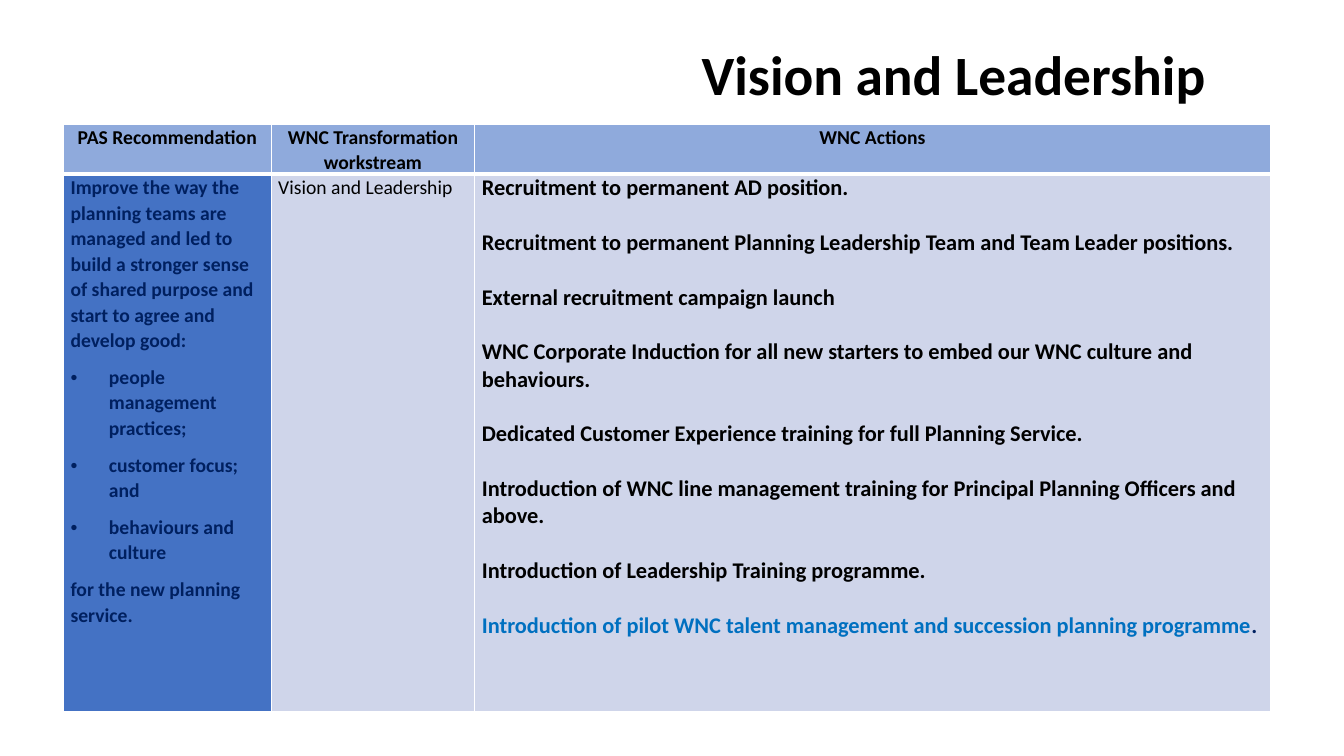
from lxml import etree
from pptx import Presentation
from pptx.dml.color import RGBColor
from pptx.enum.text import MSO_ANCHOR, PP_ALIGN
from pptx.oxml.ns import qn
from pptx.util import Inches, Pt

CENTER = PP_ALIGN.CENTER
MIDDLE = MSO_ANCHOR.MIDDLE
BLACK = RGBColor(0x00, 0x00, 0x00)
NAVY = RGBColor(0x00, 0x20, 0x60)
AZURE = RGBColor(0x00, 0x70, 0xC0)
SKY = RGBColor(0x8F, 0xAA, 0xDC)
BLUE = RGBColor(0x44, 0x72, 0xC4)
PALE = RGBColor(0xCF, 0xD5, 0xEA)

WIDTHS = [2.06, 2.02, 7.89]
HEIGHTS = [0.44, 5.33]
HEADS = ["PAS Recommendation", "WNC Transformation workstream", "WNC Actions"]
ADVICE = [
    "Improve the way the planning teams are managed and led to build a stronger "
    "sense of shared purpose and start to agree and develop good:",
    "people management practices;",
    "customer focus; and",
    "behaviours and culture",
    "for the new planning service.",
]
BULLETS = ADVICE[1:4]
ACTIONS = [
    "Recruitment to permanent AD position.",
    "Recruitment to permanent Planning Leadership Team and Team Leader positions.",
    "External recruitment campaign launch",
    "WNC Corporate Induction for all new starters to embed our WNC culture and behaviours.",
    "Dedicated Customer Experience training for full Planning Service.",
    "Introduction of WNC line management training for Principal Planning Officers and above.",
    "Introduction of Leadership Training programme.",
    "Introduction of pilot WNC talent management and succession planning programme",
]


def format_run(run, size, color, bold=True):
    run.font.name = "Calibri"
    run.font.size = Pt(size)
    run.font.bold = bold
    run.font.color.rgb = color


def fill_cell(cell, lines, fill, color, size=14, bold=True, base=3):
    cell.fill.solid()
    cell.fill.fore_color.rgb = fill
    cell.margin_left = cell.margin_right = Inches(0.07)
    cell.margin_top = cell.margin_bottom = 0
    cell.text_frame.text = "\n".join(lines)
    for par in cell.text_frame.paragraphs:
        format_run(par.runs[0], size, color, bold)
    props = cell._tc.get_or_add_tcPr()
    for spot, side in enumerate(["lnL", "lnR", "lnT", "lnB"]):
        line = etree.Element(qn("a:" + side), w=str(Pt(base if side == "lnB" else 1)))
        paint = etree.SubElement(line, qn("a:solidFill"))
        etree.SubElement(paint, qn("a:srgbClr"), val="FFFFFF")
        props.insert(spot, line)


deck = Presentation()
deck.slide_width = Inches(13.33)
deck.slide_height = Inches(7.5)
slide = deck.slides.add_slide(deck.slide_layouts[6])

title = slide.shapes.add_textbox(Inches(6.86), Inches(0.4), Inches(5.55), Inches(0.73))
frame = title.text_frame
frame.word_wrap = True
frame.vertical_anchor = MIDDLE
frame.text = "Vision and Leadership"
frame.paragraphs[0].line_spacing = 0.9
format_run(frame.paragraphs[0].runs[0], 39.6, BLACK)

table = slide.shapes.add_table(
    2, 3, Inches(0.63), Inches(1.23), Inches(sum(WIDTHS)), Inches(sum(HEIGHTS))
).table
for col, width in zip(table.columns, WIDTHS):
    col.width = Inches(width)
for row, height in zip(table.rows, HEIGHTS):
    row.height = Inches(height)

for index, head in enumerate(HEADS):
    cell = table.cell(0, index)
    fill_cell(cell, [head], SKY, BLACK)
    cell.text_frame.paragraphs[0].alignment = CENTER

advice, stream, actions = [table.cell(1, index) for index in range(3)]
fill_cell(advice, ADVICE, BLUE, NAVY, base=1)
fill_cell(stream, ["Vision and Leadership"], PALE, BLACK, bold=False, base=1)
fill_cell(actions, ACTIONS, PALE, BLACK, size=16, base=1)

for cell in [*table.rows[0].cells, advice, stream]:
    for par in cell.text_frame.paragraphs:
        par.line_spacing = 1.07
        par.space_after = Pt(8)

for par in advice.text_frame.paragraphs:
    if par.text in BULLETS:
        props = par._p.get_or_add_pPr()
        props.set("marL", str(Inches(0.38)))
        props.set("indent", str(-Inches(0.38)))
        etree.SubElement(props, qn("a:buFont"), typeface="Arial")
        etree.SubElement(props, qn("a:buChar"), char="•")

for par in actions.text_frame.paragraphs[1:]:
    par.space_before = Pt(19.5)
last = actions.text_frame.paragraphs[-1]
last.runs[0].font.color.rgb = AZURE
stop = last.add_run()
stop.text = "."
format_run(stop, 16, NAVY)

deck.save("out.pptx")
